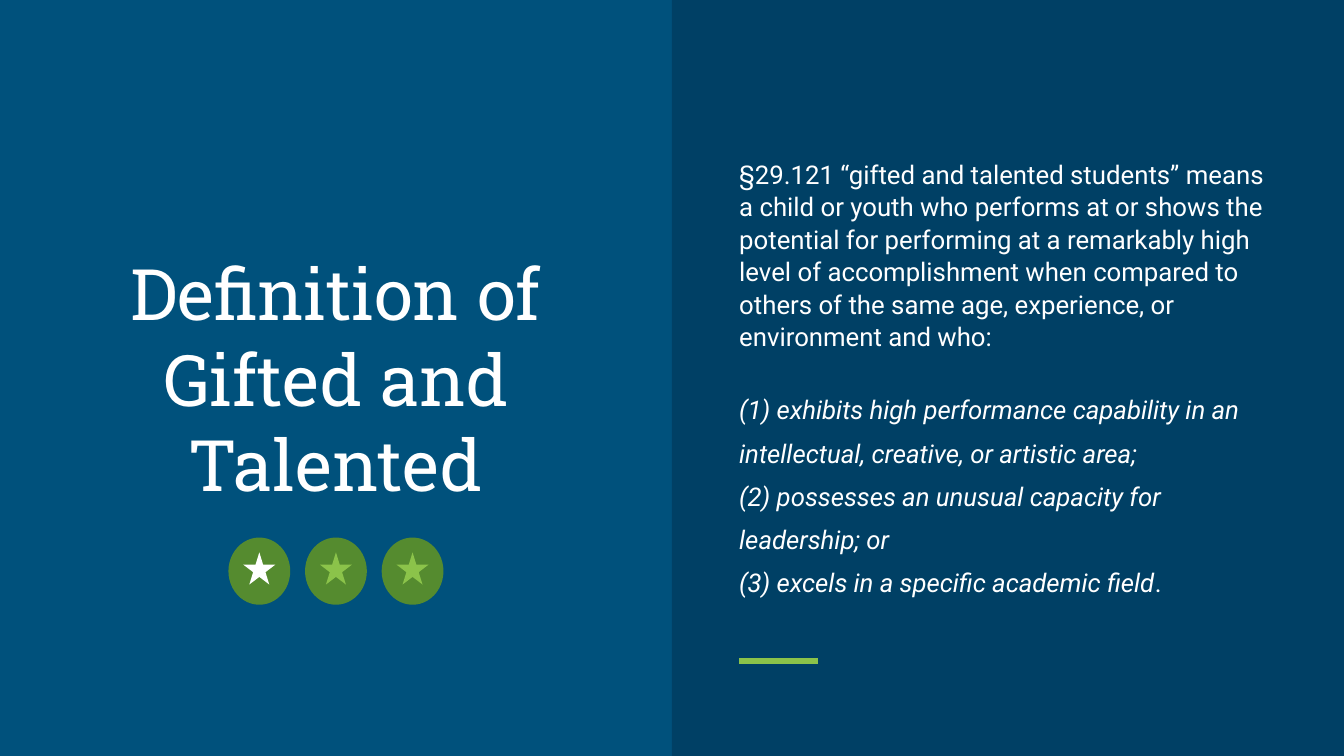
"""Builds the slide that defines gifted and talented students."""
import pptx
import pptx.dml.color
import pptx.enum.shapes
import pptx.enum.text
import pptx.oxml
import pptx.util

Inches = pptx.util.Inches
COLORS = {
    "background": "00517C",
    "panel": "004065",
    "accent": "8BC34A",
    "badge": "558B2F",
    "white": "FFFFFF",
}
WIDTH = 10
HEIGHT = WIDTH * 9 / 16
TITLE = "Definition of Gifted and Talented"
DEFINITION = (
    "§29.121 “gifted and talented students” means a child or youth who performs "
    "at or shows the potential for performing at a remarkably high level of "
    "accomplishment when compared to others of the same age, experience, or "
    "environment and who:"
)
CRITERIA = [
    "(1) exhibits high performance capability in an intellectual, creative, or artistic area;",
    "(2) possesses an unusual capacity for leadership; or",
    "(3) excels in a specific academic field",
]
SHAPES = pptx.enum.shapes.MSO_SHAPE
ALIGN = pptx.enum.text.PP_ALIGN
ANCHOR = pptx.enum.text.MSO_ANCHOR
DRAWING = "http://schemas.openxmlformats.org/drawingml/2006/main"


class DefinitionSlide:
    """Holds the style and the current slide."""

    def __init__(self, presentation):
        self.slide = presentation.slides.add_slide(presentation.slide_layouts[1])
        fill = self.slide.background.fill
        fill.solid()
        fill.fore_color.rgb = self.color("background")

    def color(self, name):
        return pptx.dml.color.RGBColor.from_string(COLORS[name])

    def apply(self, target, formats):
        for attribute, value in formats.items():
            setattr(target, attribute, value)

    def add_empty(self, parent, tag):
        parent.append(pptx.oxml.parse_xml(f'<a:{tag} xmlns:a="{DRAWING}"/>'))

    def shape(self, parent, preset, box, color):
        figure = parent.add_shape(preset, *map(Inches, box))
        figure.shadow.inherit = False
        figure.fill.solid()
        figure.fill.fore_color.rgb = self.color(color)
        figure.line.fill.background()
        return figure

    def panel(self, box):
        panel = self.shape(self.slide.shapes, SHAPES.RECTANGLE, box, "panel")
        self.slide.shapes.element.insert(2, panel.element)

    def rule(self, left, right, y):
        rule = self.slide.shapes.add_connector(
            pptx.enum.shapes.MSO_CONNECTOR.STRAIGHT,
            Inches(left), Inches(y), Inches(right), Inches(y))
        rule.line.color.rgb = self.color("accent")
        rule.line.width = pptx.util.Pt(3)
        self.add_empty(rule.element.spPr, "effectLst")

    def badge(self, left, top, star_color):
        badge = self.slide.shapes.add_group_shape().shapes
        self.shape(badge, SHAPES.OVAL, (left, top, 0.46, 0.5), "badge")
        self.shape(badge, SHAPES.STAR_5_POINT,
                   (left + 0.11, top + 0.11, 0.24, 0.24), star_color)

    def frame(self, placeholder, box, anchor, top_margin):
        left, top, width, height = map(Inches, box)
        self.apply(placeholder, {
            "left": left, "top": top, "width": width, "height": height})
        self.apply(placeholder.text_frame, {
            "word_wrap": True,
            "auto_size": pptx.enum.text.MSO_AUTO_SIZE.NONE,
            "vertical_anchor": anchor,
            "margin_left": Inches(0.1),
            "margin_right": Inches(0.1),
            "margin_top": Inches(top_margin),
            "margin_bottom": Inches(0.1),
        })
        return placeholder.text_frame

    def run(self, paragraph, text, font, size, italic=False):
        run = paragraph.add_run()
        run.text = text
        self.apply(run.font, {
            "name": font, "size": pptx.util.Pt(size), "italic": italic})
        run.font.color.rgb = self.color("white")

    def title(self, text, box):
        frame = self.frame(self.slide.shapes.title, box, ANCHOR.MIDDLE, 0.1)
        heading = frame.paragraphs[0]
        self.apply(heading, {"alignment": ALIGN.CENTER, "line_spacing": 1.0})
        self.run(heading, text, "Roboto Slab", 38)

    def body(self, definition, criteria, box):
        frame = self.frame(self.slide.placeholders[1], box, ANCHOR.TOP, 0.38)
        for index, text in enumerate([definition, *criteria]):
            paragraph = frame.add_paragraph() if index else frame.paragraphs[0]
            self.apply(paragraph, {
                "alignment": ALIGN.LEFT,
                "line_spacing": 1.4 if index else 1.05,
                "space_before": pptx.util.Pt(16 if index == 1 else 0),
                "space_after": pptx.util.Pt(0),
            })
            properties = paragraph._p.get_or_add_pPr()
            properties.set("marL", "0")
            properties.set("indent", "0")
            self.add_empty(properties, "buNone")
            self.run(paragraph, text, "Roboto", 13.8, italic=index > 0)
        self.run(paragraph, ".", "Roboto", 13.8)


def main():
    presentation = pptx.Presentation()
    presentation.slide_width = Inches(WIDTH)
    presentation.slide_height = Inches(HEIGHT)
    slide = DefinitionSlide(presentation)
    slide.panel((WIDTH / 2, 0, WIDTH / 2, HEIGHT))
    slide.rule(5.5, 6.09, 4.92)
    slide.body(DEFINITION, CRITERIA, (5.4, 0.79, 4.2, 4.04))
    slide.title(TITLE, (0.29, 2.09, 4.42, 1.44))
    for position, star_color in enumerate(["white", "accent", "accent"]):
        slide.badge(1.7 + 0.57 * position, 4, star_color)
    presentation.save("out.pptx")


if __name__ == "__main__":
    main()
